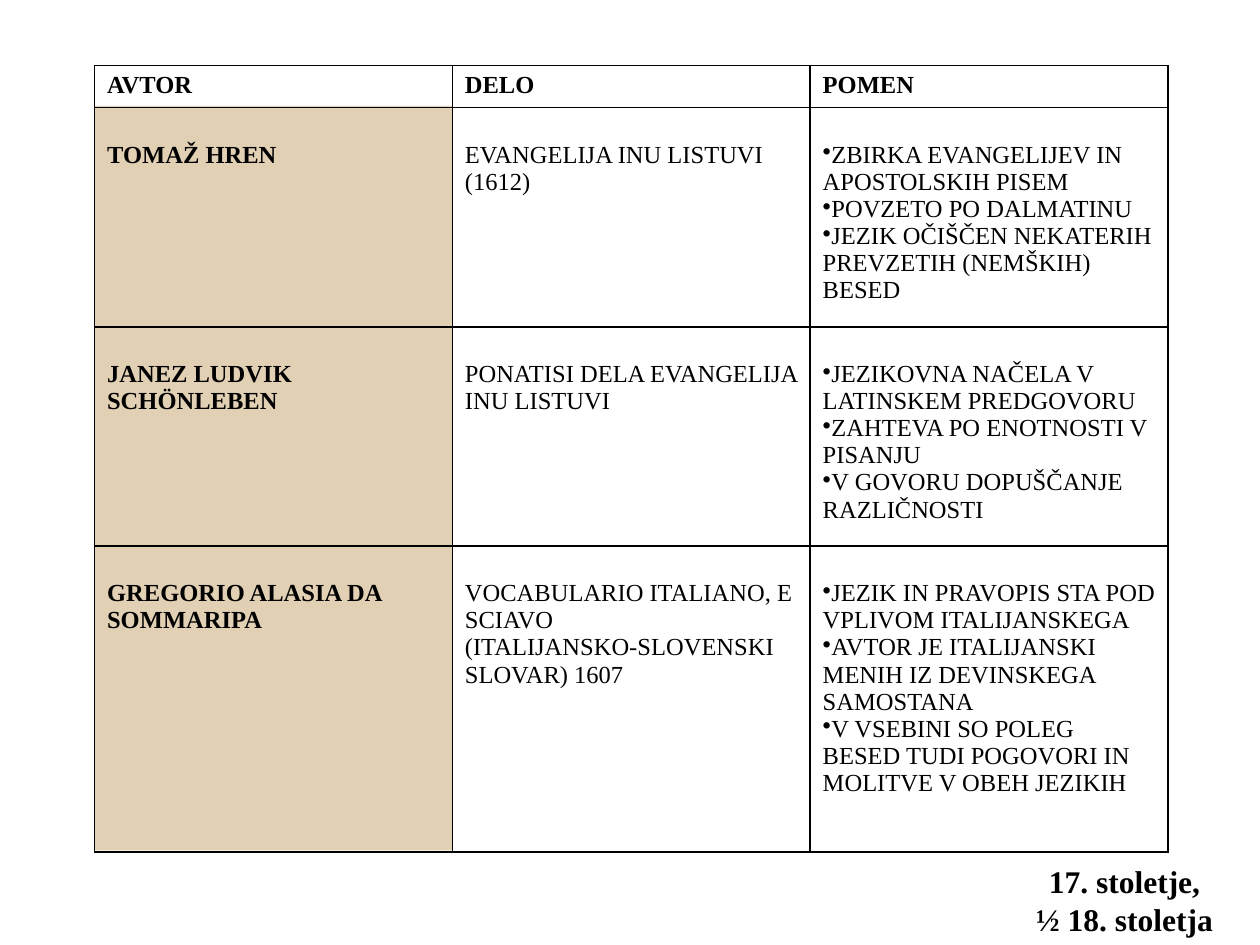
import pptx
import pptx.util
import pptx.dml.color
import pptx.enum.shapes
import pptx.enum.text
import pptx.oxml.ns
import lxml.etree

Inches = pptx.util.Inches
Pt = pptx.util.Pt
qn = pptx.oxml.ns.qn

COLORS = {"ink": "000000", "sand": "D5BA93"}
FONT = "Times New Roman"
LEFT, TOP, COL = 0.75, 0.52, 2.84
HEIGHTS = [0.33, 1.74, 1.74, 2.43]
GAP = 0.27  # room above the text, one line deep

HEADS = ["AVTOR", "DELO", "POMEN"]
# Author, work lines, points of meaning
ROWS = [
    (["TOMAŽ HREN"],
     ["EVANGELIJA INU LISTUVI (1612)"],
     ["ZBIRKA EVANGELIJEV IN APOSTOLSKIH PISEM",
      "POVZETO PO DALMATINU",
      "JEZIK OČIŠČEN NEKATERIH PREVZETIH (NEMŠKIH) BESED"]),
    (["JANEZ LUDVIK SCHÖNLEBEN"],
     ["PONATISI DELA EVANGELIJA INU LISTUVI"],
     ["JEZIKOVNA NAČELA V LATINSKEM PREDGOVORU",
      "ZAHTEVA PO ENOTNOSTI V PISANJU",
      "V GOVORU DOPUŠČANJE RAZLIČNOSTI"]),
    (["GREGORIO ALASIA DA SOMMARIPA"],
     ["VOCABULARIO ITALIANO, E SCIAVO",
      "(ITALIJANSKO-SLOVENSKI SLOVAR) 1607"],
     ["JEZIK IN PRAVOPIS STA POD VPLIVOM ITALIJANSKEGA",
      "AVTOR JE ITALIJANSKI MENIH IZ DEVINSKEGA SAMOSTANA",
      "V VSEBINI SO POLEG BESED TUDI POGOVORI IN MOLITVE V OBEH JEZIKIH"]),
]


def rgb(name):
    return pptx.dml.color.RGBColor.from_string(COLORS[name])


def style(para, size, bold):
    for run in para.runs:
        run.font.name = FONT
        run.font.size = Pt(size)
        run.font.bold = bold
        run.font.color.rgb = rgb("ink")


def bullet(para):
    props = para._p.get_or_add_pPr()
    props.set("marL", "0")
    props.set("indent", "0")
    lxml.etree.SubElement(props, qn("a:buChar")).set("char", "•")


def border(cell):
    props = cell._tc.get_or_add_tcPr()
    for spot, side in enumerate(["lnL", "lnR", "lnT", "lnB"]):
        line = lxml.etree.Element(qn("a:" + side), w=str(Pt(1)))
        fill = lxml.etree.SubElement(line, qn("a:solidFill"))
        lxml.etree.SubElement(fill, qn("a:srgbClr"), val=COLORS["ink"])
        props.insert(spot, line)


def fill_cell(cell, lines, bold, dots, gap):
    cell.fill.background()
    border(cell)
    cell.margin_top = Inches(gap)
    cell.text_frame.text = "\n".join(lines)
    for para in cell.text_frame.paragraphs:
        if dots:
            bullet(para)
        style(para, 14, bold)


def add_band(slide):
    band = slide.shapes.add_shape(
        pptx.enum.shapes.MSO_SHAPE.RECTANGLE,
        Inches(LEFT), Inches(0.84), Inches(COL), Inches(5.91))
    band.shadow.inherit = False
    band.line.fill.background()
    band.fill.solid()
    band.fill.fore_color.rgb = rgb("sand")
    tint = band._element.spPr.find(".//" + qn("a:srgbClr"))
    lxml.etree.SubElement(tint, qn("a:alpha")).set("val", "68000")


def add_grid(slide):
    frame = slide.shapes.add_table(
        len(HEIGHTS), len(HEADS), Inches(LEFT), Inches(TOP),
        Inches(COL * len(HEADS)), Inches(sum(HEIGHTS)))
    table = frame.table
    table.first_row = table.horz_banding = False
    for col in table.columns:
        col.width = Inches(COL)
    for row, high in zip(table.rows, HEIGHTS):
        row.height = Inches(high)
    for c, head in enumerate(HEADS):
        fill_cell(table.cell(0, c), [head], True, False, 0.05)
    for r, row in enumerate(ROWS, 1):
        for c, lines in enumerate(row):
            fill_cell(table.cell(r, c), lines, c == 0, c == 2, GAP)


def add_date(slide):
    box = slide.shapes.add_textbox(
        Inches(7.85), Inches(6.57), Inches(2.15), Inches(0.93))
    frame = box.text_frame
    frame.word_wrap = False
    frame.margin_top = Inches(GAP)
    frame.text = "17. stoletje,\n½ 18. stoletja"
    for para in frame.paragraphs:
        para.alignment = pptx.enum.text.PP_ALIGN.CENTER
        style(para, 18, True)


def main():
    deck = pptx.Presentation()
    deck.slide_width, deck.slide_height = Inches(10), Inches(7.5)
    slide = deck.slides.add_slide(deck.slide_layouts[6])
    add_band(slide)  # tint behind the authors
    add_date(slide)
    add_grid(slide)
    deck.save("out.pptx")


if __name__ == "__main__":
    main()
